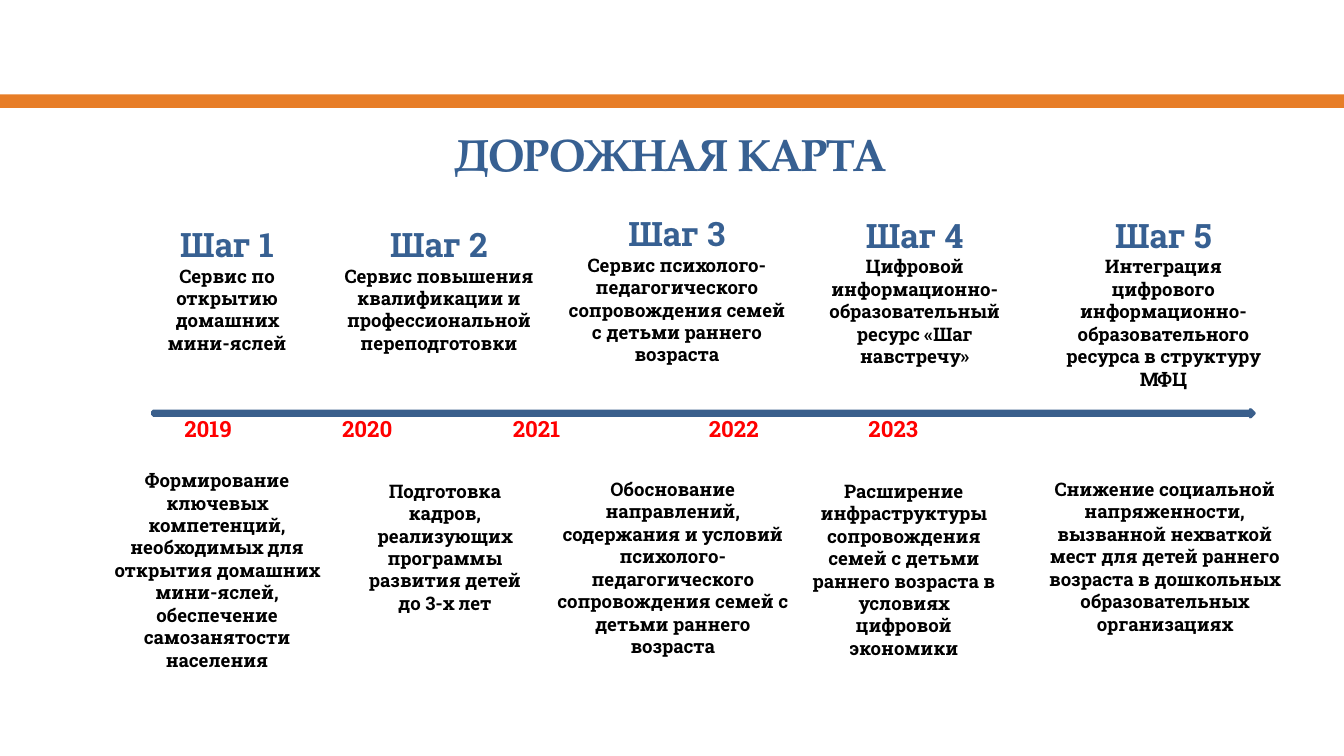
from lxml.etree import SubElement
from pptx import Presentation
from pptx.dml.color import RGBColor
from pptx.enum.shapes import MSO_SHAPE
from pptx.enum.text import MSO_ANCHOR, PP_ALIGN
from pptx.oxml.ns import qn
from pptx.util import Pt

WHITE = RGBColor(0xFF, 0xFF, 0xFF)
BLACK = RGBColor(0, 0, 0)
RED = RGBColor(0xFF, 0, 0)
ORANGE = RGBColor(0xE4, 0x6C, 0x0A)
HEADING_BLUE = RGBColor(0x37, 0x60, 0x92)
ARROW_BLUE = RGBColor(0x4F, 0x81, 0xBD)
ARROW_EDGE = RGBColor(0x3A, 0x5F, 0x8C)

TITLE_FONT = "TeX Gyre Pagella"
BODY_FONT = "Roboto Slab"
NARROW_INSETS = (5.2, 2.6)
WIDE_INSETS = (7.2, 3.6)


class RoadmapSlide:
    """Holds the text style and the slide being drawn."""

    def __init__(self, slide):
        self.slide = slide

    def text(self, box, lines, insets=NARROW_INSETS, font=BODY_FONT,
             align=PP_ALIGN.CENTER, anchor=MSO_ANCHOR.TOP):
        """Add a text box; each line is (text, size, color)."""
        shape = self.slide.shapes.add_textbox(*map(Pt, box))
        frame = shape.text_frame
        frame.word_wrap = True
        frame.vertical_anchor = anchor
        frame.margin_left = frame.margin_right = Pt(insets[0])
        frame.margin_top = frame.margin_bottom = Pt(insets[1])
        frame.text = "\n".join(line[0] for line in lines)
        for paragraph, (_, size, color) in zip(frame.paragraphs, lines):
            paragraph.alignment = align
            for run in paragraph.runs:
                run.font.name = font
                run.font.size = Pt(size)
                run.font.bold = True
                run.font.color.rgb = color
        return shape

    def card(self, box, heading, body, filled):
        """Add a step description or a result under the timeline."""
        lines = [(heading, 18, HEADING_BLUE)] if heading else []
        lines += [(text, 10, BLACK) for text in body]
        shape = self.text(box, lines, NARROW_INSETS if filled else WIDE_INSETS)
        if filled:
            shape.fill.solid()
            shape.fill.fore_color.rgb = WHITE

    def years(self, box, years, stops):
        """Add the years in one line, spaced by tab stops."""
        shape = self.text(box, [("", 12, RED)], align=PP_ALIGN.LEFT)
        paragraph = shape.text_frame.paragraphs[0]
        tab_list = SubElement(paragraph._p.get_or_add_pPr(), qn("a:tabLst"))
        for stop in stops:
            SubElement(tab_list, qn("a:tab"), pos=str(Pt(stop)), algn="l")
        for index, year in enumerate(years):
            run = paragraph.add_run()
            run.text = "\t" + year if index else year
            run.font.name = BODY_FONT
            run.font.size = Pt(12)
            run.font.bold = True
            run.font.color.rgb = RED

    def block(self, kind, box, color, edge=None, opacity=100):
        """Add a plain filled shape."""
        shape = self.slide.shapes.add_shape(kind, *map(Pt, box))
        shape.shadow.inherit = False
        shape.fill.solid()
        shape.fill.fore_color.rgb = color
        if opacity < 100:
            color_element = shape._element.spPr.find(qn("a:solidFill"))[0]
            SubElement(color_element, qn("a:alpha"), val=str(opacity * 1000))
        if edge is None:
            shape.line.fill.background()
        else:
            shape.line.color.rgb = edge
            shape.line.width = Pt(2)


# Box, heading, body paragraphs, white background
STEPS = [
    ((82, 117.4, 79.2, 75.6), "Шаг 1",
     ["Сервис по открытию домашних мини-яслей"], True),
    ((172.8, 117.4, 124.6, 75.6), "Шаг 2",
     ["Сервис повышения квалификации и профессиональной переподготовки"], True),
    ((297.4, 111.6, 130.3, 87.8), "Шаг 3",
     ["Сервис психолого-педагогического сопровождения семей "
      "с детьми раннего возраста"], True),
    ((427.7, 111.6, 124.6, 90), "Шаг 4",
     ["Цифровой информационно-образовательный ресурс «Шаг навстречу»"], False),
    ((563.8, 111.6, 118.8, 101.5), "Шаг 5",
     ["Интеграция",
      "цифрового информационно-образовательного ресурса в структуру МФЦ"],
     False),
]
RESULTS = [
    ((48.2, 247.7, 136.1, 116.6), None,
     ["Формирование",
      "ключевых компетенций, необходимых для открытия домашних мини-яслей, "
      "обеспечение самозанятости населения"], False),
    ((184.3, 253.4, 108, 80), None,
     ["Подготовка кадров, реализующих программы развития детей до 3-х лет"],
     False),
    ((292.3, 253.4, 136.1, 102.2), None,
     ["Обоснование направлений, содержания и условий "
      "психолого-педагогического сопровождения семей с детьми раннего "
      "возраста"], True),
    ((427.7, 253.4, 113, 104.4), None,
     ["Расширение инфраструктуры сопровождения семей с детьми раннего "
      "возраста в условиях цифровой экономики"], False),
    ((553, 253.4, 141.8, 102.2), None,
     ["Снижение социальной напряженности, вызванной нехваткой мест для детей "
      "раннего возраста в дошкольных образовательных организациях"], True),
]


def main():
    presentation = Presentation()
    presentation.slide_width = Pt(720)
    presentation.slide_height = Pt(405)
    roadmap = RoadmapSlide(
        presentation.slides.add_slide(presentation.slide_layouts[6]))

    # Header band and title
    roadmap.block(MSO_SHAPE.RECTANGLE, (0, 50.6, 720, 7.2), ORANGE, opacity=88)
    roadmap.text((36, 66.2, 645.8, 32.4), [("ДОРОЖНАЯ КАРТА", 24, HEADING_BLUE)],
                 (0, 0), TITLE_FONT, anchor=MSO_ANCHOR.MIDDLE)

    # Years, steps above and results below the timeline
    roadmap.years((93.6, 219.6, 558.7, 20.2),
                  ["2019", "2020", "2021", "2022", "2023"],
                  [84.5, 176, 281, 366.5])
    for card in STEPS + RESULTS:
        roadmap.card(*card)

    # Timeline arrow
    roadmap.block(MSO_SHAPE.RIGHT_ARROW, (82, 219.6, 589.7, 3.6),
                  ARROW_BLUE, ARROW_EDGE)

    presentation.save("out.pptx")


if __name__ == "__main__":
    main()
